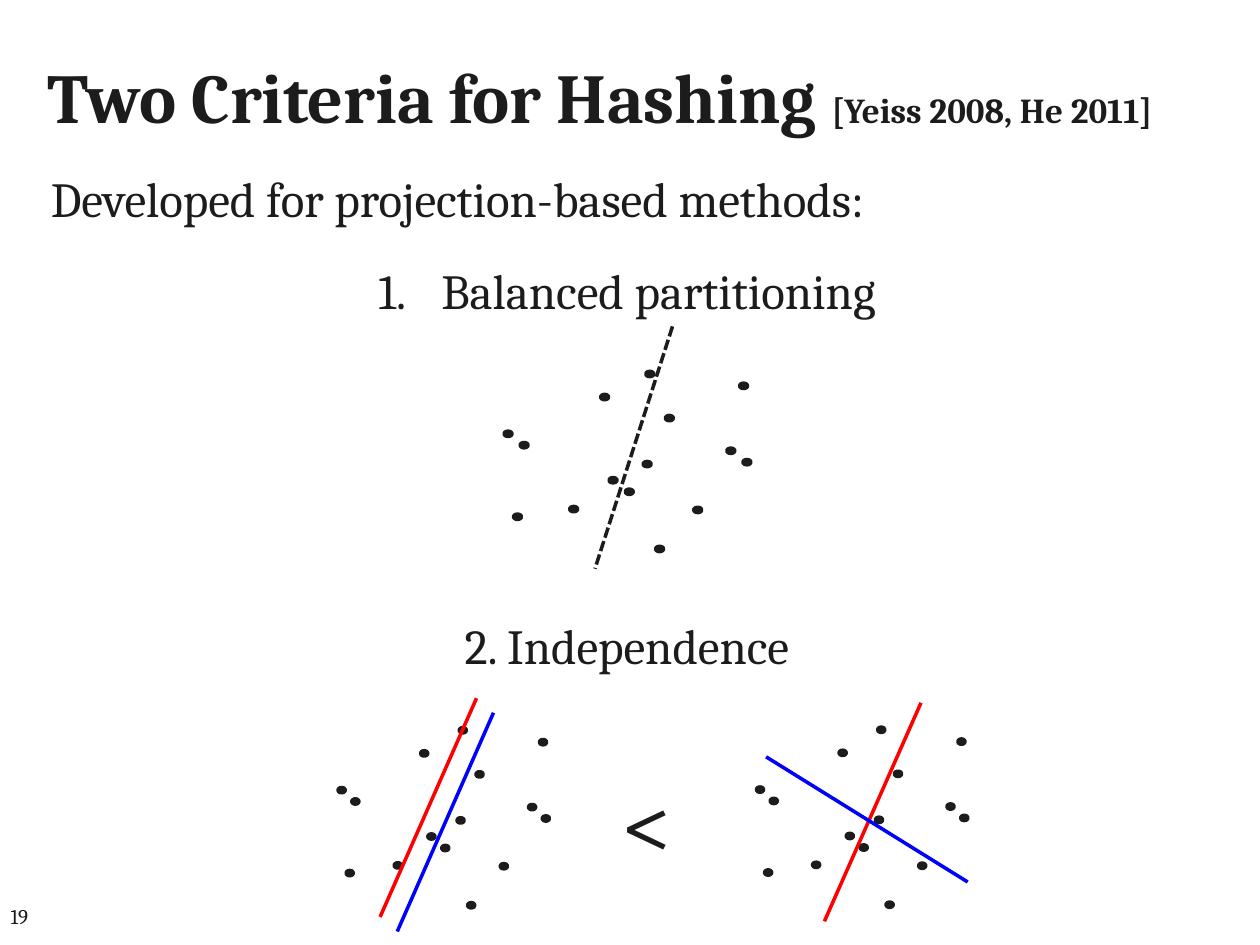
from lxml.etree import SubElement
from pptx import Presentation
from pptx.dml.color import RGBColor
from pptx.enum.dml import MSO_LINE
from pptx.enum.shapes import MSO_CONNECTOR, MSO_SHAPE
from pptx.enum.text import MSO_ANCHOR, PP_ALIGN
from pptx.oxml.ns import qn
from pptx.util import Pt

INK, RED, BLUE = "1C1C1C", "FF0000", "0000FF"
FONT = "Cambria"

# Dot centres, as offsets from the plot's left and top edges
DOTS = [
    (0, 34.2), (9.2, 40.7), (55.2, 13.2), (81, 0), (60, 60.7),
    (5.4, 81.6), (86.6, 100), (108.4, 77.7), (92.2, 25.2), (127.3, 43.9),
    (136.5, 50.4), (69.3, 67.3), (79.5, 51.5), (134.6, 6.8), (37.5, 77.2),
]


def color(code):
    return RGBColor.from_string(code)


def add_run(para, text, size=28, bold=False):
    run = para.add_run()
    run.text = text
    font = run.font
    font.name, font.size, font.bold = FONT, Pt(size), bold
    font.color.rgb = color(INK)


def add_text(slide, text, box, size=28, bold=False, align=PP_ALIGN.LEFT,
             anchor=MSO_ANCHOR.TOP):
    frame = slide.shapes.add_textbox(*map(Pt, box)).text_frame
    frame.word_wrap = True
    frame.vertical_anchor = anchor
    para = frame.paragraphs[0]
    para.alignment = align
    add_run(para, text, size, bold)
    return frame


def number(para, indent):
    props = para._p.get_or_add_pPr()
    props.set("marL", str(Pt(indent)))
    props.set("indent", str(-Pt(indent)))
    SubElement(props, qn("a:buFont"), typeface="+mj-lt")
    SubElement(props, qn("a:buAutoNum"), type="arabicPeriod")


def add_line(shapes, start, end, code, dash=None):
    line = shapes.add_connector(MSO_CONNECTOR.STRAIGHT, *map(Pt, start + end))
    line.line.color.rgb = color(code)
    line.line.width = Pt(2)
    if dash:
        line.line.dash_style = dash
    SubElement(line._element.spPr, qn("a:effectLst"))


def add_plot(slide, left, top, scale=1):
    shapes = slide.shapes.add_group_shape().shapes
    wide, high = 3.6 * scale, 2
    for x, y in DOTS:
        box = (left + x * scale - wide / 2, top + y - high / 2, wide, high)
        dot = shapes.add_shape(MSO_SHAPE.OVAL, *map(Pt, box))
        dot.shadow.inherit = False
        dot.fill.solid()
        dot.fill.fore_color.rgb = color(INK)
        dot.line.color.rgb = color(INK)
        dot.line.width = Pt(3)
    return shapes


def main():
    deck = Presentation()
    deck.slide_width, deck.slide_height = Pt(720), Pt(540)
    slide = deck.slides.add_slide(deck.slide_layouts[6])

    # Title, page number and lead-in
    title = add_text(slide, "Two Criteria for Hashing ", (20, 9.5, 692, 90),
                     size=40, bold=True, anchor=MSO_ANCHOR.MIDDLE)
    add_run(title.paragraphs[0], "[Yeiss 2008, He 2011]", 20, True)
    add_text(slide, "19", (-1, 509, 168, 29), size=12,
             anchor=MSO_ANCHOR.MIDDLE)
    add_text(slide, "Developed for projection-based methods:",
             (22, 93, 639, 41))

    # The two criteria, with room for a plot between them
    rules = add_text(slide, "Balanced partitioning", (22, 145.5, 672.5, 245),
                     align=PP_ALIGN.CENTER)
    number(rules.paragraphs[0], 36)
    second = rules.add_paragraph()
    second.alignment = PP_ALIGN.CENTER
    second.space_before = Pt(169)
    add_run(second, "2. Independence")

    # Balanced partitioning
    plot = add_plot(slide, 290.3, 213.7)
    add_line(plot, (384.3, 186.5), (340, 325), INK, MSO_LINE.SQUARE_DOT)

    # Independence: near-parallel cuts are worse than crossing cuts
    add_plot(slide, 195.2, 417.3, 0.855)
    add_line(slide.shapes, (272.3, 399), (217.2, 524), RED)
    add_line(slide.shapes, (282, 407.3), (227, 532.3), BLUE)
    add_plot(slide, 434.3, 417, 0.855)
    add_line(slide.shapes, (526.3, 401.6), (471.1, 526.5), RED)
    add_line(slide.shapes, (553, 504), (437.8, 432.5), BLUE)
    add_text(slide, "<", (348, 432.7, 57, 72.7), size=54)

    deck.save("out.pptx")


if __name__ == "__main__":
    main()
